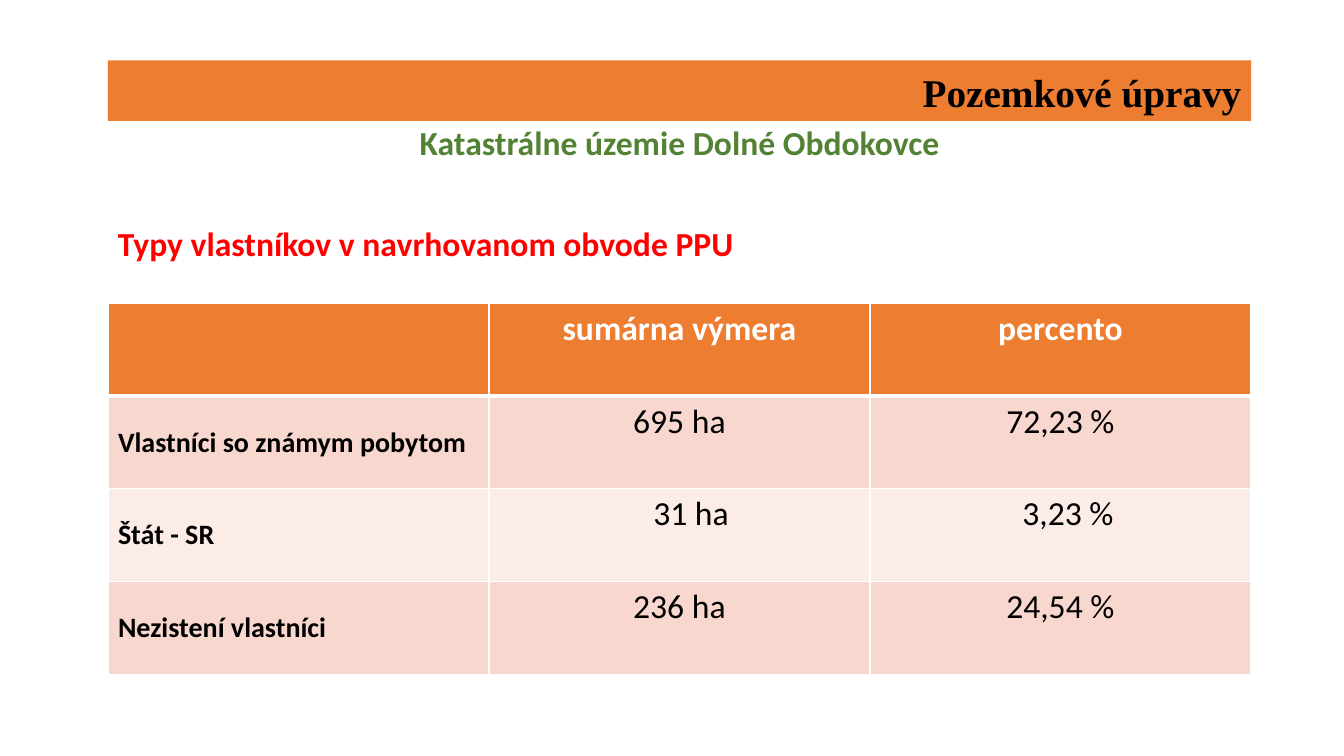
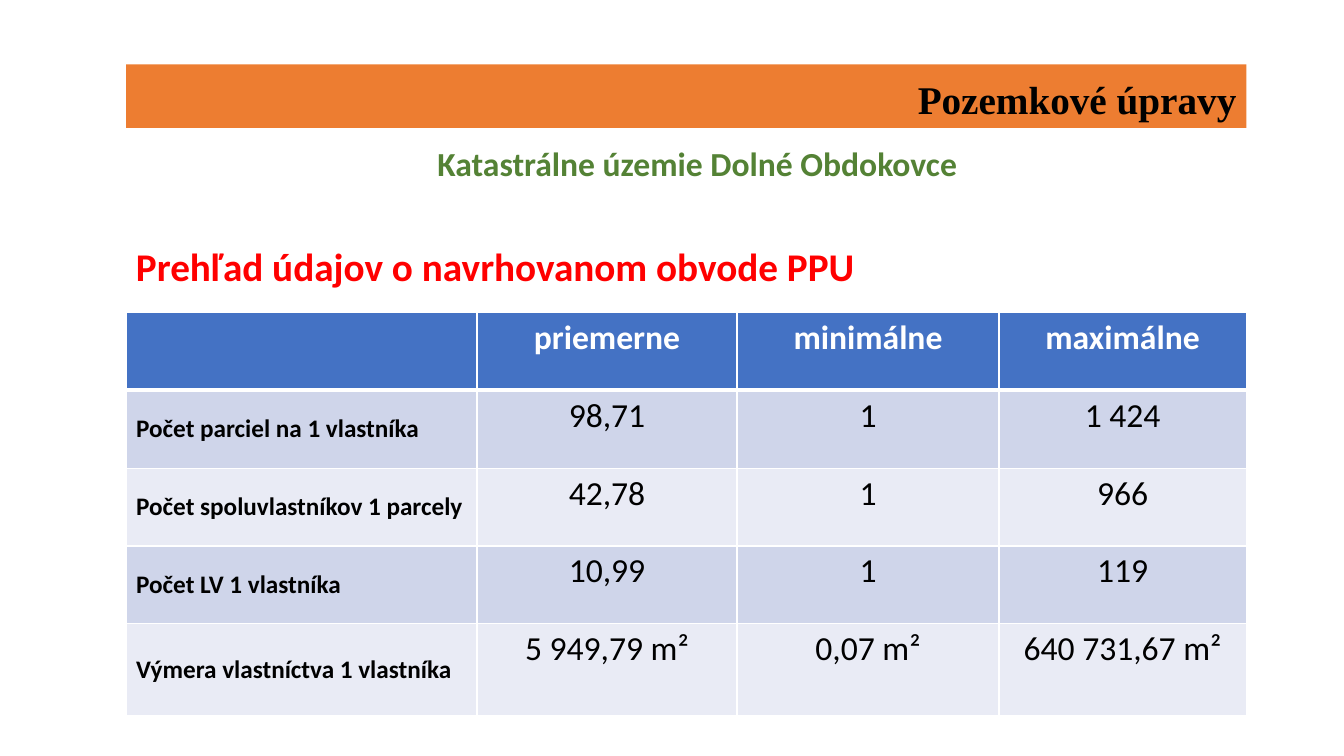
from lxml import etree
from pptx import Presentation
from pptx.dml.color import RGBColor
from pptx.enum.shapes import MSO_SHAPE
from pptx.enum.text import MSO_ANCHOR, PP_ALIGN
from pptx.oxml.ns import qn
from pptx.util import Inches, Pt

LEFT, CENTER, RIGHT = PP_ALIGN.LEFT, PP_ALIGN.CENTER, PP_ALIGN.RIGHT
TOP, MIDDLE, BOTTOM = MSO_ANCHOR.TOP, MSO_ANCHOR.MIDDLE, MSO_ANCHOR.BOTTOM
RECTANGLE = MSO_SHAPE.RECTANGLE

WIDTH, HEIGHT = Inches(13.33), Inches(7.5)
INSET = 0.1
COLORS = {
    "band": "ED7D31",
    "area": "548235",
    "heading": "FF0000",
    "text": "000000",
    "white": "FFFFFF",
}
ORANGE = {"header": "ED7D31", "odd": "F8D7CE", "even": "FCECE8"}
BLUE = {"header": "4472C4", "odd": "CFD5EA", "even": "E9EBF5"}


def across(percent):
    return round(WIDTH * percent / 100)


def down(percent):
    return round(HEIGHT * percent / 100)


def place(left, top, width, height):
    """Turn percentages of the slide into a position and a size."""
    return across(left), down(top), across(width), down(height)


def write(paragraph, text, size=24, color=COLORS["text"], bold=True,
          font="Calibri", align=LEFT, spacing=1.0, before=0):
    paragraph.alignment = align
    paragraph.line_spacing = spacing
    paragraph.space_before = Pt(before)
    run = paragraph.add_run()
    run.text = text
    run.font.size = Pt(size)
    run.font.bold = bold
    run.font.name = font
    run.font.color.rgb = RGBColor.from_string(color)


def add_title_band(slide, box):
    band = slide.shapes.add_shape(RECTANGLE, *place(*box))
    band.shadow.inherit = False
    band.fill.solid()
    band.fill.fore_color.rgb = RGBColor.from_string(COLORS["band"])
    band.line.fill.background()
    band.text_frame.vertical_anchor = BOTTOM
    write(band.text_frame.paragraphs[0], "Pozemkové úpravy", size=28,
          font="Times New Roman", align=RIGHT, spacing=0.9)


def add_headings(slide, box, heading, size):
    frame = slide.shapes.add_textbox(*place(*box)).text_frame
    frame.word_wrap = True
    write(frame.paragraphs[0], "Katastrálne územie Dolné Obdokovce",
          color=COLORS["area"], align=CENTER, spacing=0.9)
    write(frame.add_paragraph(), heading, size=size,
          color=COLORS["heading"], spacing=0.9, before=46)


def set_borders(cell, top, bottom):
    """Draw white borders; they must precede the fill in the cell's XML."""
    properties = cell._tc.get_or_add_tcPr()
    widths = {"a:lnL": 1, "a:lnR": 1, "a:lnT": top, "a:lnB": bottom}
    for index, (tag, points) in enumerate(widths.items()):
        line = etree.Element(qn(tag), w=str(Pt(points)))
        fill = etree.SubElement(line, qn("a:solidFill"))
        etree.SubElement(fill, qn("a:srgbClr"), val=COLORS["white"])
        properties.insert(index, line)


def fill_cell(cell, text, row, column, theme, label_size, shift):
    header, label = row == 0, column == 0
    band = "header" if header else "odd" if row % 2 else "even"
    cell.fill.solid()
    cell.fill.fore_color.rgb = RGBColor.from_string(theme[band])
    set_borders(cell, top=3 if row == 1 else 1, bottom=3 if header else 1)
    cell.margin_left = Inches(INSET + shift)
    cell.vertical_anchor = MIDDLE if label and not header else TOP
    if text:
        write(cell.text_frame.paragraphs[0], text,
              size=label_size if label else 24,
              color=COLORS["white"] if header else COLORS["text"],
              bold=header or label, align=LEFT if label else CENTER)


def add_data_table(slide, left, top, columns, heights, rows, theme,
                   label_size, shifts):
    """Shifts maps (row, column) to extra left inset in inches."""
    box = place(left, top, sum(columns), sum(heights))
    table = slide.shapes.add_table(len(rows), len(columns), *box).table
    for column, share in zip(table.columns, columns):
        column.width = across(share)
    for row, share in zip(table.rows, heights):
        row.height = down(share)
    for r, texts in enumerate(rows):
        for c, text in enumerate(texts):
            fill_cell(table.cell(r, c), text, r, c, theme, label_size,
                      shifts.get((r, c), 0))


def add_page(deck, left, band, headings, heading, heading_size, table_top,
             columns, heights, rows, theme, label_size, shifts):
    """Band and headings are (top, width, height) in percent."""
    slide = deck.slides.add_slide(deck.slide_layouts[6])
    add_title_band(slide, (left, *band))
    add_headings(slide, (left, *headings), heading, heading_size)
    add_data_table(slide, left, table_top, columns, heights, rows, theme,
                   label_size, shifts)


def main():
    deck = Presentation()
    deck.slide_width, deck.slide_height = WIDTH, HEIGHT
    add_page(
        deck, left=8.03, band=(8, 85.07, 8), headings=(16.13, 85.07, 21),
        heading="Typy vlastníkov v navrhovanom obvode PPU", heading_size=24,
        table_top=40.13, columns=[28.35] * 3, heights=[12.27] * 4,
        rows=[
            ("", "sumárna výmera", "percento"),
            ("Vlastníci so známym pobytom", "695 ha", "72,23 %"),
            ("Štát - SR", "31 ha", "3,23 %"),
            ("Nezistení vlastníci", "236 ha", "24,54 %"),
        ],
        theme=ORANGE, label_size=20, shifts={(2, 1): 0.23, (2, 2): 0.15})
    add_page(
        deck, left=9.38, band=(8.53, 83.35, 8.4), headings=(18.8, 85, 21),
        heading="Prehľad údajov o navrhovanom obvode PPU", heading_size=28,
        table_top=41.33, columns=[26.11, 19.35, 19.5, 18.38],
        heights=[10.3] * 4 + [12.1],
        rows=[
            ("", "priemerne", "minimálne", "maximálne"),
            ("Počet parciel na 1 vlastníka", "98,71", "1", "1 424"),
            ("Počet spoluvlastníkov 1 parcely", "42,78", "1", "966"),
            ("Počet LV 1 vlastníka", "10,99", "1", "119"),
            ("Výmera vlastníctva 1 vlastníka", "5 949,79 m²", "0,07 m²",
             "640 731,67 m²"),
        ],
        theme=BLUE, label_size=18, shifts={})
    deck.save("out.pptx")


if __name__ == "__main__":
    main()
